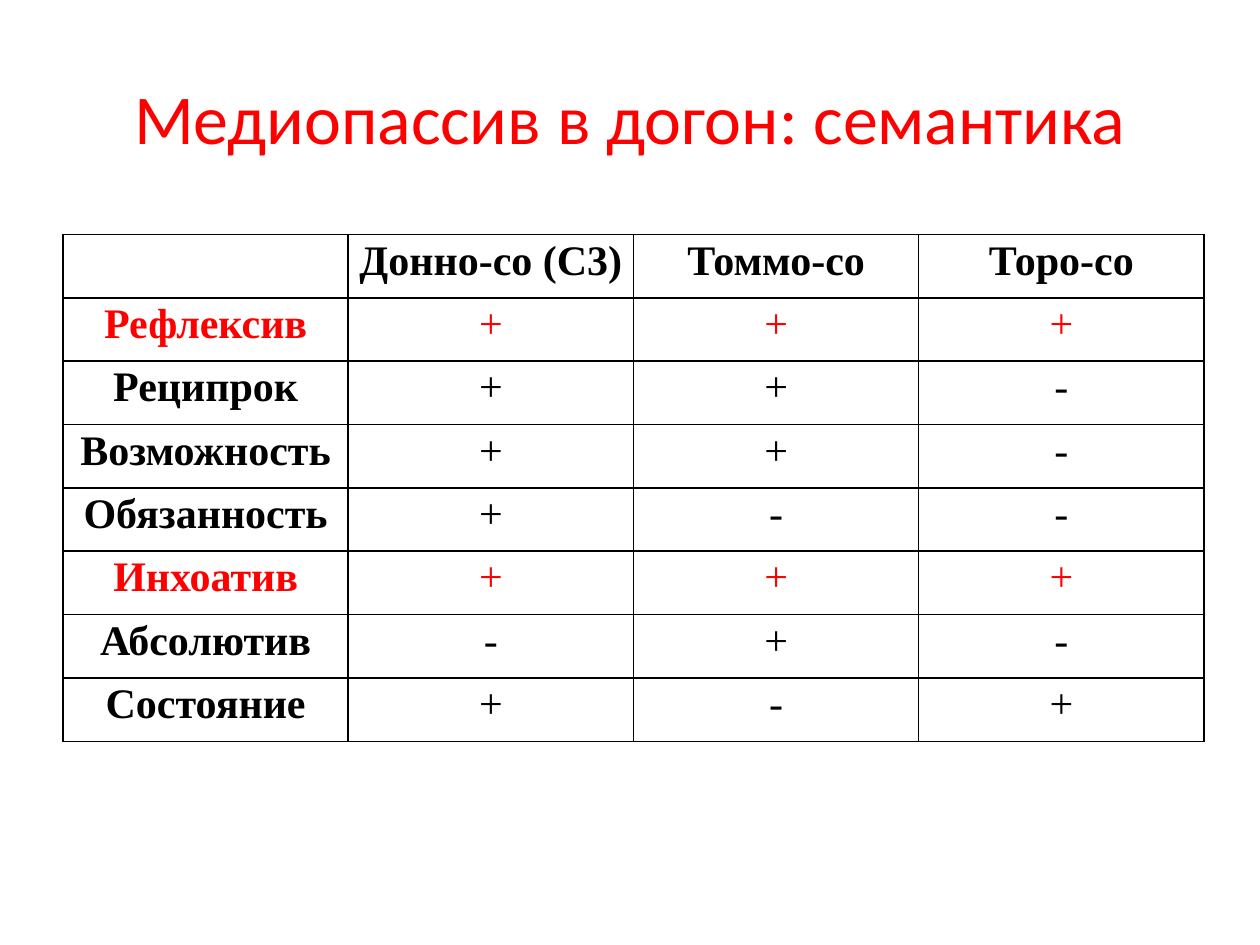
from lxml.etree import SubElement
from pptx import Presentation
from pptx.dml.color import RGBColor
from pptx.enum.text import MSO_ANCHOR, PP_ALIGN
from pptx.oxml.ns import qn
from pptx.util import Pt

COLORS = {"black": "000000", "red": "FF0000"}
ROWS = [
    ("", "Донно-со (С3)", "Томмо-со", "Торо-со"),
    ("Рефлексив", "+", "+", "+"),
    ("Реципрок", "+", "+", "-"),
    ("Возможность", "+", "+", "-"),
    ("Обязанность", "+", "-", "-"),
    ("Инхоатив", "+", "+", "+"),
    ("Абсолютив", "-", "+", "-"),
    ("Состояние", "+", "-", "+"),
]
COL_W, ROW_H = 163, 36.2


def style(p, font, size, color, bold=False):
    p.alignment = PP_ALIGN.CENTER
    p.font.name = font
    p.font.size = Pt(size)
    p.font.bold = bold
    p.font.color.rgb = RGBColor.from_string(COLORS[color])


def add_borders(cell):
    tc_pr = cell._tc.get_or_add_tcPr()
    for side in ("lnL", "lnR", "lnT", "lnB"):
        ln = SubElement(tc_pr, qn(f"a:{side}"), w=str(Pt(1)))
        fill = SubElement(ln, qn("a:solidFill"))
        SubElement(fill, qn("a:srgbClr"), val=COLORS["black"])


prs = Presentation()
prs.slide_width, prs.slide_height = Pt(720), Pt(540)
s = prs.slides.add_slide(prs.slide_layouts[6])

# Title
title = s.shapes.add_textbox(Pt(36), Pt(21.6), Pt(648), Pt(90))
tf = title.text_frame
tf.word_wrap = True
tf.vertical_anchor = MSO_ANCHOR.MIDDLE
p = tf.paragraphs[0]
p.text = "Медиопассив в догон: семантика"
style(p, "Calibri", 40, "red")

# Table of meanings by language
n_rows, n_cols = len(ROWS), len(ROWS[0])
table = s.shapes.add_table(n_rows, n_cols, Pt(36), Pt(134),
                           Pt(COL_W * n_cols), Pt(ROW_H * n_rows)).table
for col in table.columns:
    col.width = Pt(COL_W)
for i, values in enumerate(ROWS):
    table.rows[i].height = Pt(ROW_H)
    # Meanings found in all three languages are red
    color = "red" if values[1:] == ("+", "+", "+") else "black"
    for j, value in enumerate(values):
        cell = table.cell(i, j)
        cell.margin_left = cell.margin_right = Pt(5)
        cell.margin_top = cell.margin_bottom = Pt(0)
        add_borders(cell)
        cell.fill.background()
        p = cell.text_frame.paragraphs[0]
        p.text = value
        p.line_spacing = 1.07
        style(p, "Times New Roman", 24, color, bold=i == 0 or j == 0)

prs.save("out.pptx")
